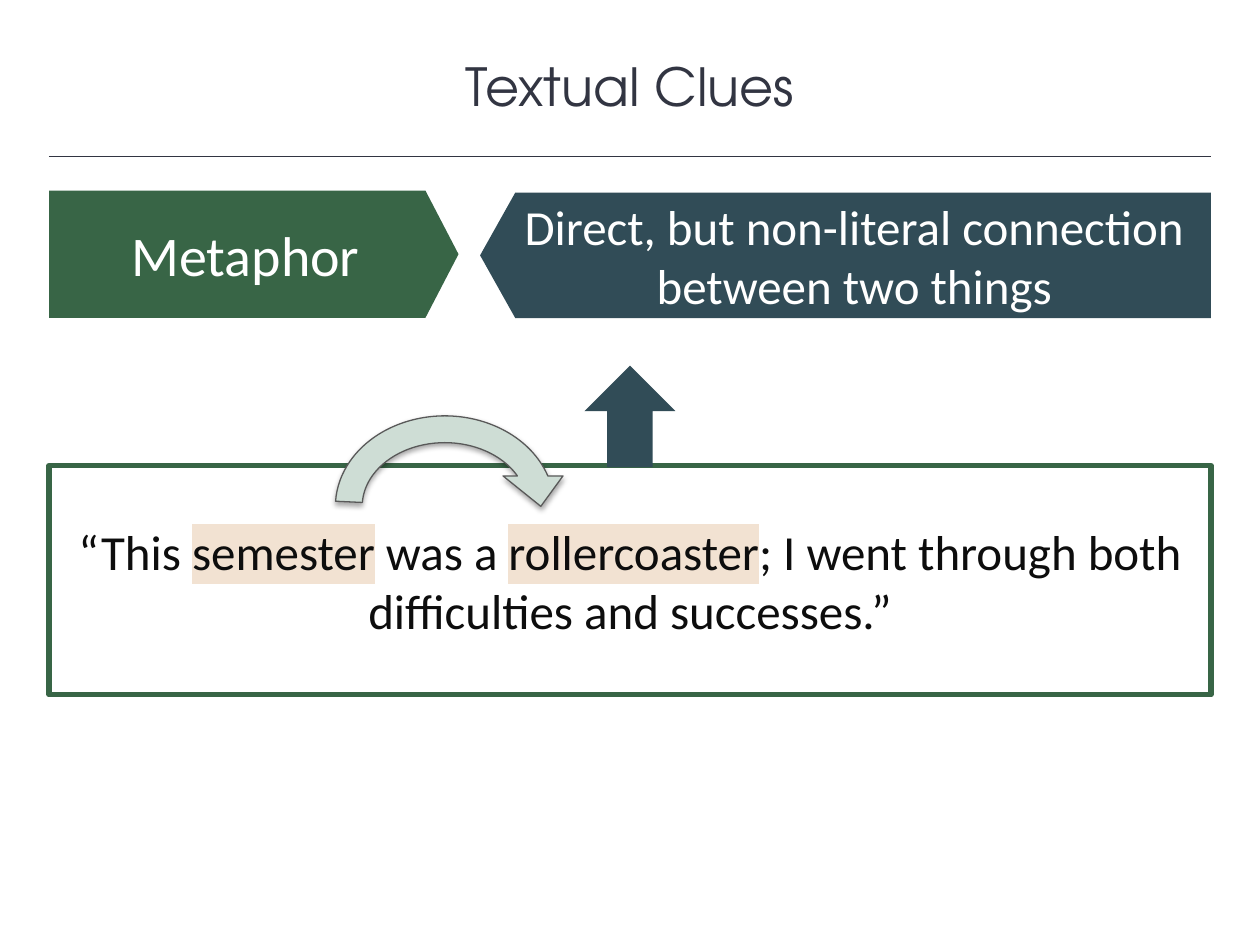
"""Build the Textual Clues slide, which explains a metaphor with an example."""
from dataclasses import dataclass

from lxml.etree import SubElement
from pptx import Presentation
from pptx.dml.color import RGBColor
from pptx.enum.shapes import MSO_CONNECTOR as Connector, MSO_SHAPE as Shape
from pptx.enum.text import MSO_ANCHOR as Anchor, MSO_AUTO_SIZE as AutoSize, PP_ALIGN as Align
from pptx.oxml.ns import qn
from pptx.util import Pt


@dataclass(frozen=True)
class Theme:
    ink: str = "323542"
    green: str = "386546"
    blue: str = "314C57"
    mint: str = "CEDDD5"
    sand: str = "F2E2D2"
    grey: str = "595959"
    black: str = "0D0D0D"
    white: str = "FFFFFF"
    title_font: str = "TeX Gyre Adventor"
    body_font: str = "Calibri"
    title_size: float = 30
    term_size: float = 32
    body_size: float = 28


THEME = Theme()
PAGE_WIDTH, PAGE_HEIGHT = 720, 540
LEFT, RIGHT = 28, 692


def color(value):
    return RGBColor.from_string(value)


def add_color(parent, value):
    return SubElement(parent, qn("a:srgbClr"), val=value)


def write(shape, spans, size, ink, font=THEME.body_font):
    """Write one centred paragraph; each span is (text, is_highlighted)."""
    frame = shape.text_frame
    frame.word_wrap = True
    frame.auto_size = AutoSize.NONE
    frame.vertical_anchor = Anchor.MIDDLE
    para = frame.paragraphs[0]
    para.alignment = Align.CENTER
    para.font.size = Pt(size)
    para.font.name = font
    para.font.color.rgb = color(ink)
    for text, is_highlighted in spans:
        span = para.add_run()
        span.text = text
        if is_highlighted:
            highlight = SubElement(span._r.get_or_add_rPr(), qn("a:highlight"))
            add_color(highlight, THEME.sand)


def add_title(page, text):
    title = page.shapes.title
    title.left, title.top, title.width, title.height = Pt(0), Pt(26.6), Pt(PAGE_WIDTH), Pt(44)
    write(title, [(text, False)], THEME.title_size, THEME.ink, THEME.title_font)


def add_rule(page, y):
    rule = page.shapes.add_connector(Connector.STRAIGHT, Pt(LEFT), Pt(y), Pt(RIGHT), Pt(y))
    rule.line.color.rgb = color(THEME.ink)
    rule.line.width = Pt(1)
    SubElement(rule._element.spPr, qn("a:effectLst"))


def add_block(page, kind, bounds, fill, line=None, width=0, adjustments=()):
    block = page.shapes.add_shape(kind, *map(Pt, bounds))
    for index, value in enumerate(adjustments):
        block.adjustments[index] = value
    block.fill.solid()
    block.fill.fore_color.rgb = color(fill)
    if line:
        block.line.color.rgb = color(line)
        block.line.width = Pt(width)
    else:
        block.line.fill.background()
    block.shadow.inherit = False
    return block


def add_soft_shadow(shape):
    effects = shape._element.spPr.find(qn("a:effectLst"))
    shadow = SubElement(effects, qn("a:outerShdw"), blurRad=str(Pt(3.1)), dist=str(Pt(1.8)),
                        dir="5400000", rotWithShape="0")
    SubElement(add_color(shadow, "000000"), qn("a:alpha"), val="35000")


def add_definition(page, term, meaning):
    """Add the term and its meaning as two pentagons that point at each other."""
    left = add_block(page, Shape.PENTAGON, (LEFT, 108.9, 234, 72.7), THEME.green,
                     adjustments=[0.26])
    write(left, [(term, False)], THEME.term_size, THEME.white)
    right = add_block(page, Shape.PENTAGON, (274.4, 110, RIGHT - 274.4, 71.8), THEME.blue,
                      adjustments=[0.28])
    right._element.spPr.xfrm.set("flipH", "1")
    write(right, [(meaning, False)], THEME.body_size, THEME.white)


def add_example(page, spans):
    """Add the framed sentence and the two arrows that explain it."""
    frame = add_block(page, Shape.RECTANGLE, (LEFT, 266, RIGHT - LEFT, 131), THEME.white,
                      THEME.green, 3)
    write(frame, spans, THEME.body_size, THEME.black)
    add_block(page, Shape.UP_ARROW, (334, 209, 52, 58), THEME.blue)
    arc = add_block(page, Shape.CIRCULAR_ARROW, (182.2, 228.2, 144, 122.4), THEME.mint,
                    THEME.grey, 0.75, [0.125, 11.42, 204.58, 109.62, 0.14])
    add_soft_shadow(arc)


def main():
    deck = Presentation()
    deck.slide_width, deck.slide_height = Pt(PAGE_WIDTH), Pt(PAGE_HEIGHT)
    page = deck.slides.add_slide(deck.slide_layouts[5])
    add_title(page, "Textual Clues")
    add_rule(page, 89.5)
    add_definition(page, "Metaphor", "Direct, but non-literal connection between two things")
    add_example(page, [
        ("“This ", False),
        ("semester", True),
        (" was a ", False),
        ("rollercoaster", True),
        ("; I went through both difficulties and successes.”", False),
    ])
    deck.save("out.pptx")


if __name__ == "__main__":
    main()
